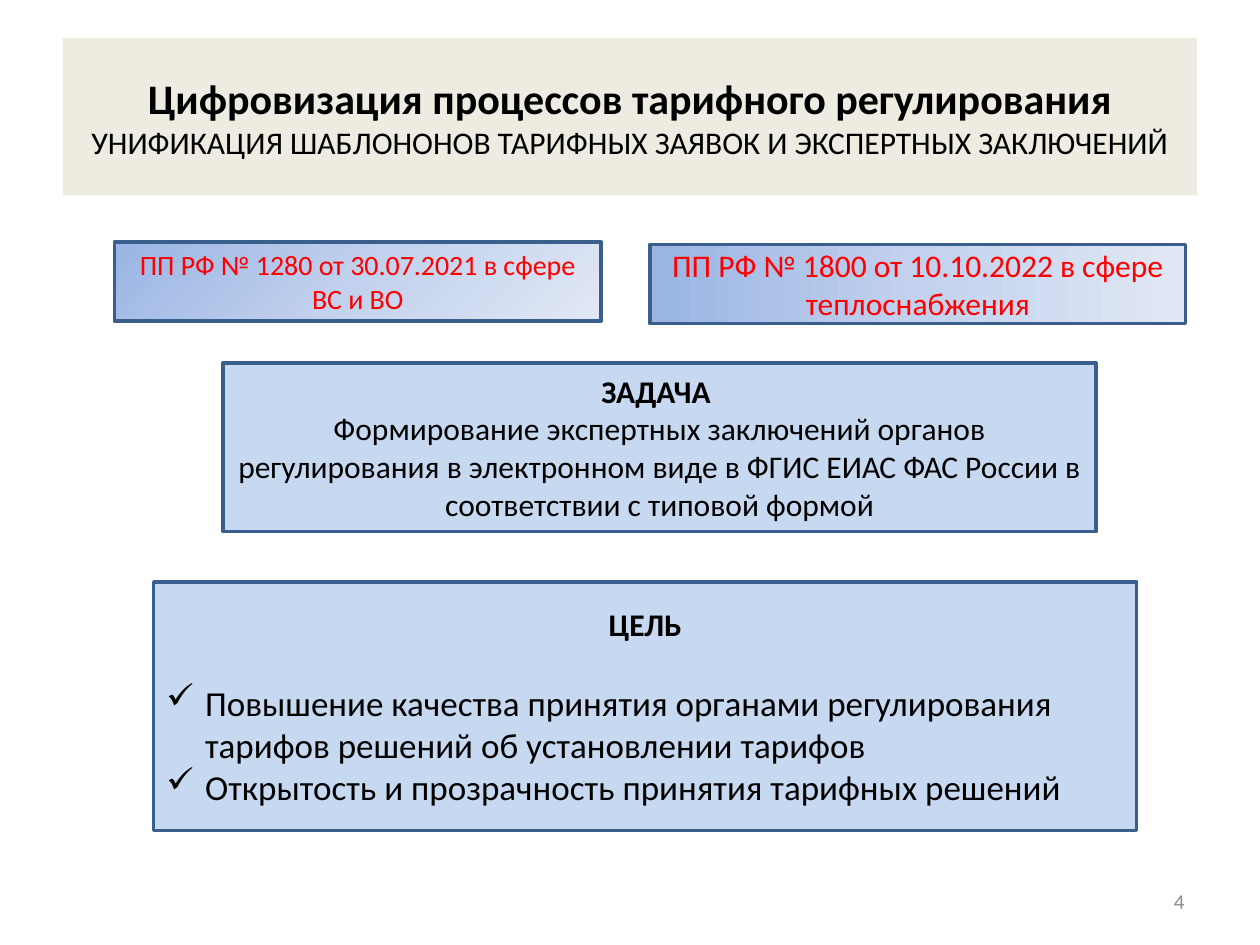
from copy import deepcopy
from dataclasses import dataclass

from lxml.etree import SubElement
from pptx import Presentation
from pptx.dml.color import RGBColor as Rgb
from pptx.enum.shapes import MSO_SHAPE as Shape
from pptx.enum.text import MSO_ANCHOR as Anchor, PP_ALIGN as Align
from pptx.oxml.ns import qn
from pptx.util import Inches, Pt

COLS, ROWS = 100, 75
WIDTH, HEIGHT = Inches(10), Inches(7.5)


@dataclass(frozen=True)
class Theme:
    font: str = "Calibri"
    ink: str = "000000"
    alert: str = "FF0000"
    muted: str = "8C8C8C"
    band: str = "EEECE1"
    panel: str = "C6D9F1"
    edge: str = "3A5F8C"
    fade: tuple = ("9AB5E4", "C2D1ED", "E1E8F5")
    head: int = 24
    goal: int = 20
    body: int = 18
    small: int = 16
    note: int = 12


THEME = Theme()


def place(col, row, cols, rows):
    """Turn grid cells into left, top, width and height."""
    across, down = WIDTH / COLS, HEIGHT / ROWS
    return (round(col * across), round(row * down),
            round(cols * across), round(rows * down))


def add_box(slide, cell, fill=None, edge=True):
    box = slide.shapes.add_shape(Shape.RECTANGLE, *place(*cell))
    box.shadow.inherit = False
    if fill:
        box.fill.solid()
        box.fill.fore_color.rgb = Rgb.from_string(fill)
    if edge:
        box.line.color.rgb = Rgb.from_string(THEME.edge)
        box.line.width = Pt(2)
    else:
        box.line.fill.background()
    box.text_frame.word_wrap = True
    box.text_frame.vertical_anchor = Anchor.MIDDLE
    return box


def fade_fill(box, angle):
    """Three-stop gradient; the angle runs counter-clockwise."""
    box.fill.gradient()
    box.fill.gradient_angle = angle
    stops = box._element.spPr.find(".//" + qn("a:gsLst"))
    middle = deepcopy(stops[0])
    middle.set("pos", "50000")
    stops.insert(1, middle)
    for stop, tint in zip(box.fill.gradient_stops, THEME.fade):
        stop.color.rgb = Rgb.from_string(tint)


def add_para(frame, first=False, align=Align.CENTER):
    para = frame.paragraphs[0] if first else frame.add_paragraph()
    para.alignment = align
    return para


def add_run(para, text, size=THEME.body, color=THEME.ink, bold=False):
    run = para.add_run()
    run.text = text
    font = run.font
    font.name, font.size, font.bold = THEME.font, Pt(size), bold
    font.color.rgb = Rgb.from_string(color)


def add_tick(para):
    """Hang the paragraph behind a check mark."""
    props = para._p.get_or_add_pPr()
    indent = Inches(0.31)
    props.set("marL", str(indent))
    props.set("indent", str(-indent))
    SubElement(props, qn("a:buFont"), typeface="Wingdings")
    SubElement(props, qn("a:buChar"), char="ü")


def add_title(slide):
    box = add_box(slide, (5, 3, 90, 12.5), THEME.band, edge=False)
    para = add_para(box.text_frame, first=True)
    add_run(para, "Цифровизация процессов тарифного регулирования",
            THEME.head, bold=True)
    para.add_line_break()
    add_run(para, "УНИФИКАЦИЯ ШАБЛОНОНОВ ТАРИФНЫХ ЗАЯВОК "
                  "И ЭКСПЕРТНЫХ ЗАКЛЮЧЕНИЙ")


def add_decree(slide, cell, angle, text, size):
    box = add_box(slide, cell)
    fade_fill(box, angle)
    add_run(add_para(box.text_frame, first=True), text, size, THEME.alert)


def add_panel(slide, cell, head):
    frame = add_box(slide, cell, THEME.panel).text_frame
    add_run(add_para(frame, first=True), head, bold=True)
    return frame


def add_goal(slide):
    frame = add_panel(slide, (12.2, 46.2, 78, 19.7), "ЦЕЛЬ")
    frame.paragraphs[0].space_after = Pt(22)
    for text in (
        "Повышение качества принятия органами регулирования "
        "тарифов решений об установлении тарифов",
        "Открытость и прозрачность принятия тарифных решений",
    ):
        para = add_para(frame, align=Align.LEFT)
        add_tick(para)
        add_run(para, text, THEME.goal)


def add_number(slide, text):
    frame = slide.shapes.add_textbox(*place(71.7, 69.5, 23.3, 4)).text_frame
    frame.word_wrap = True
    frame.vertical_anchor = Anchor.MIDDLE
    para = add_para(frame, first=True, align=Align.RIGHT)
    add_run(para, text, THEME.note, THEME.muted)


def main():
    deck = Presentation()
    deck.slide_width, deck.slide_height = WIDTH, HEIGHT
    slide = deck.slides.add_slide(deck.slide_layouts[6])
    add_title(slide)
    add_number(slide, "4")
    add_decree(slide, (9.1, 19.2, 38.6, 6.3), 315,
               "ПП РФ № 1280 от 30.07.2021 в сфере ВС и ВО", THEME.small)
    add_decree(slide, (51.6, 19.4, 42.5, 6.3), 0,
               "ПП РФ № 1800 от 10.10.2022 в сфере теплоснабжения", THEME.body)
    task = add_panel(slide, (17.7, 28.8, 69.3, 13.4), "ЗАДАЧА ")
    add_run(add_para(task),
            "Формирование экспертных заключений органов регулирования "
            "в электронном виде в ФГИС ЕИАС ФАС России "
            "в соответствии с типовой формой")
    add_goal(slide)
    deck.save("out.pptx")


if __name__ == "__main__":
    main()
